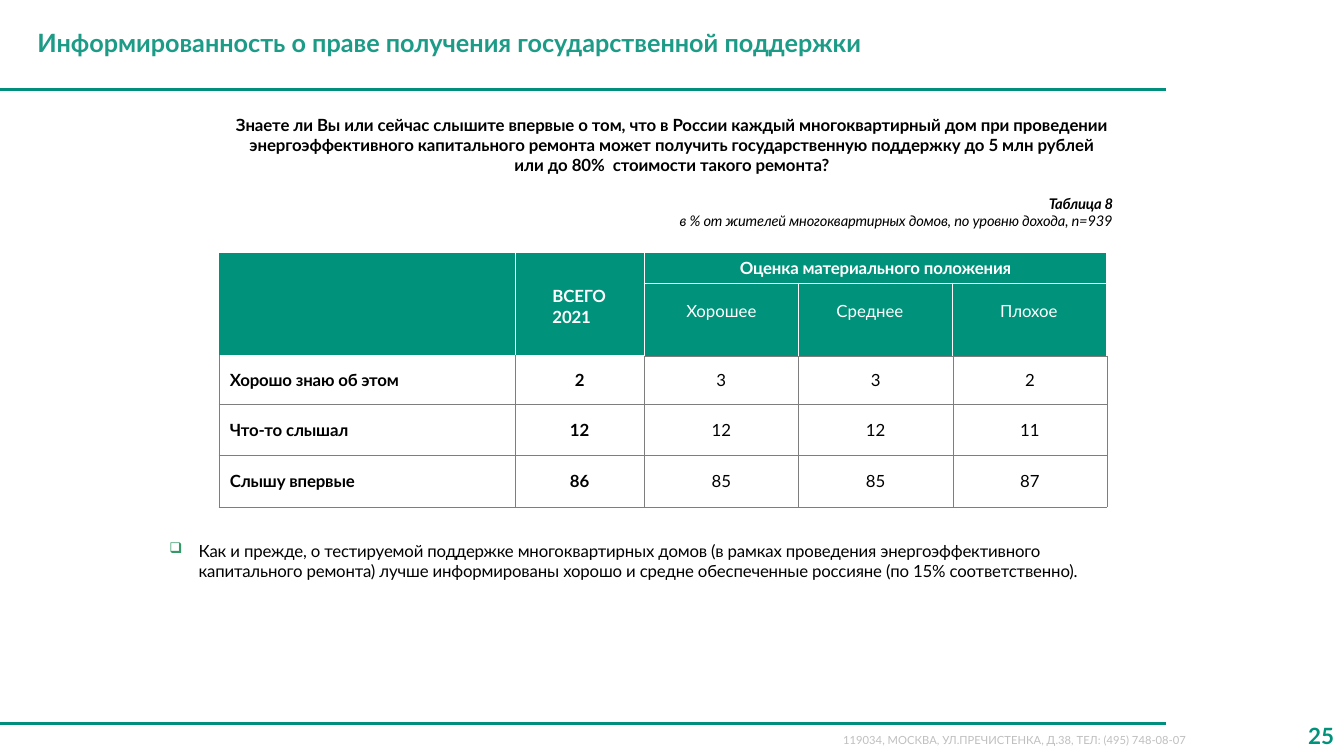
from pptx import Presentation
from pptx.dml.color import RGBColor
from pptx.enum.shapes import MSO_CONNECTOR
from pptx.enum.text import MSO_ANCHOR, MSO_AUTO_SIZE, PP_ALIGN
from pptx.oxml.ns import qn
from pptx.util import Inches, Pt
from lxml.etree import SubElement

COLORS = {
    "rule": "008F7D", "header": "00927B", "header_fill": "00927A",
    "title": "1C9B87", "bullet": "339966", "address": "BFBFBF",
    "text": "000000", "white": "FFFFFF", "grid": "7E7E7E",
}
FONT = "Lato"
SLIDE_W, SLIDE_H = 13.33, 7.5
RULE_W = 11.56

COLUMN_WIDTHS = [2.94, 1.28] + [1.53] * 3
ROW_HEIGHTS = [0.31, 0.72, 0.48, 0.51, 0.51]
INCOME_LEVELS = ["Хорошее", "Среднее", "Плохое"]
ANSWERS = [
    ("Хорошо знаю об этом", 2, 3, 3, 2),
    ("Что-то слышал", 12, 12, 12, 11),
    ("Слышу впервые", 86, 85, 85, 87),
]
QUESTION_LINES = [
    "Знаете ли Вы или сейчас слышите впервые о том, что в России каждый многоквартирный дом при проведении",
    "энергоэффективного капитального ремонта может получить государственную поддержку до 5 млн рублей",
    "или до 80%  стоимости такого ремонта?",
]
CONCLUSION = (
    "Как и прежде, о тестируемой поддержке многоквартирных домов (в рамках проведения "
    "энергоэффективного капитального ремонта) лучше информированы хорошо и средне "
    "обеспеченные россияне (по 15% соответственно)."
)


def color(name):
    """Return the named palette colour."""
    return RGBColor.from_string(COLORS[name])


def write(paragraph, text, size=12, ink="text", bold=False, italic=False, spacing=0):
    """Add one formatted run to a paragraph."""
    run = paragraph.add_run()
    run.text = text
    font = run.font
    font.name, font.size, font.bold, font.italic = FONT, Pt(size), bold, italic
    font.color.rgb = color(ink)
    if spacing:
        run._r.get_or_add_rPr().set("spc", str(round(spacing * 100)))


def add_frame(slide, box, insets=(0.1, 0.05, 0.1, 0.05)):
    """Add a wrapping text box and return its text frame."""
    frame = slide.shapes.add_textbox(*map(Inches, box)).text_frame
    frame.word_wrap = True
    set_insets(frame, insets)
    return frame


def set_insets(holder, insets):
    """Set left, top, right and bottom margins of a frame or cell."""
    holder.margin_left, holder.margin_top, holder.margin_right, holder.margin_bottom = map(Inches, insets)


def add_rule(slide, y):
    """Draw a green horizontal rule from the left slide edge."""
    rule = slide.shapes.add_connector(MSO_CONNECTOR.STRAIGHT, 0, Inches(y), Inches(RULE_W), Inches(y))
    rule.line.color.rgb = color("rule")
    rule.line.width = Pt(2)
    SubElement(rule._element.spPr, qn("a:effectLst"))


def add_header(slide, box):
    """Place the slide title and the rule under it."""
    left, top, width, height = box
    title = slide.shapes.title
    title.left, title.top, title.width, title.height = map(Inches, box)
    frame = title.text_frame
    frame.auto_size = MSO_AUTO_SIZE.NONE
    frame.vertical_anchor = MSO_ANCHOR.MIDDLE
    heading = frame.paragraphs[0]
    heading.alignment = PP_ALIGN.JUSTIFY
    write(heading, "Информированность о праве получения государственной поддержки", 18, "title", True)
    add_rule(slide, top + height + 0.04)


def add_footer(slide, box):
    """Place the bottom rule, the address and the page number."""
    left, top, width, height = box
    add_rule(slide, top + 0.08)
    address = add_frame(slide, (left + 0.62 * width, top + 0.13, 3.84, 0.24))
    write(address.paragraphs[0], "119034, МОСКВА, УЛ.ПРЕЧИСТЕНКА, Д.38, ТЕЛ: (495) 748-08-07", 8, "address")
    page = add_frame(slide, (left + width - 0.69, top, 0.69, height))
    page.vertical_anchor = MSO_ANCHOR.MIDDLE
    page.paragraphs[0].alignment = PP_ALIGN.RIGHT
    write(page.paragraphs[0], "25", 16, "header", True)


def add_question(slide, box):
    """Place the survey question and the table caption."""
    frame = add_frame(slide, box, (0, 0.02, 0, 0))
    question = frame.paragraphs[0]
    question.alignment = PP_ALIGN.CENTER
    question._p.get_or_add_pPr().set("marR", str(Inches(0.09)))
    for index, line in enumerate(QUESTION_LINES):
        if index:
            question.add_line_break()
        write(question, line, bold=True, spacing=-0.05)
    number, base = frame.add_paragraph(), frame.add_paragraph()
    number.alignment = base.alignment = PP_ALIGN.RIGHT
    number.space_before = Pt(13.6)
    write(number, "Таблица 8", 10.5, bold=True, italic=True, spacing=-0.1)
    write(base, "в % от жителей многоквартирных домов, по уровню дохода, n=939", 10.5, italic=True, spacing=-0.1)


def style_cell(cell, is_header, meets_data):
    """Give a cell its borders, fill and zero margins."""
    properties = cell._tc.get_or_add_tcPr()
    for side in "LRTB":
        white = is_header and not (side == "B" and meets_data)
        border = SubElement(properties, qn(f"a:ln{side}"), w=str(Pt(1 if white else 0.25)))
        fill = SubElement(border, qn("a:solidFill"))
        SubElement(fill, qn("a:srgbClr"), val=COLORS["white" if white else "grid"])
    if is_header:
        cell.fill.solid()
        cell.fill.fore_color.rgb = color("header_fill")
    else:
        cell.fill.background()
    set_insets(cell, (0, 0, 0, 0))
    cell.vertical_anchor = MSO_ANCHOR.MIDDLE


def fill_cell(cell, text, align=PP_ALIGN.CENTER, **style):
    """Write one aligned line into a cell."""
    cell.text_frame.paragraphs[0].alignment = align
    write(cell.text_frame.paragraphs[0], text, **style)


def add_answers_table(slide, left, top):
    """Build the table of answers by income level."""
    table = slide.shapes.add_table(
        len(ROW_HEIGHTS), len(COLUMN_WIDTHS), Inches(left), Inches(top),
        Inches(sum(COLUMN_WIDTHS)), Inches(sum(ROW_HEIGHTS))).table
    table.first_row = table.horz_banding = False
    for column, width in zip(table.columns, COLUMN_WIDTHS):
        column.width = Inches(width)
    for index, (row, height) in enumerate(zip(table.rows, ROW_HEIGHTS)):
        row.height = Inches(height)
        for cell in row.cells:
            style_cell(cell, index < 2, index == 1)
    for first, last in [((0, 0), (1, 0)), ((0, 1), (1, 1)), ((0, 2), (0, 4))]:
        table.cell(*first).merge(table.cell(*last))

    total = table.cell(0, 1)
    set_insets(total, (0.37, 0.05, 0, 0))
    label = total.text_frame.paragraphs[0]
    write(label, "ВСЕГО", ink="white", bold=True, spacing=-0.1)
    label.add_line_break()
    write(label, "2021", ink="white", bold=True, spacing=-0.1)
    fill_cell(table.cell(0, 2), "Оценка материального положения", ink="white", bold=True, spacing=-0.1)
    for offset, level in enumerate(INCOME_LEVELS):
        cell = table.cell(1, 2 + offset)
        cell.vertical_anchor = MSO_ANCHOR.TOP
        set_insets(cell, (0, 0.18, 0.49 if offset else 0, 0))
        fill_cell(cell, level, PP_ALIGN.RIGHT if offset else PP_ALIGN.CENTER, ink="white")
    for row, (answer, *shares) in enumerate(ANSWERS, 2):
        table.cell(row, 0).margin_left = Inches(0.11)
        fill_cell(table.cell(row, 0), answer, PP_ALIGN.LEFT, bold=True, spacing=-0.1)
        for column, share in enumerate(shares, 1):
            fill_cell(table.cell(row, column), str(share), bold=column == 1)


def add_conclusion(slide, box):
    """Place the bulleted conclusion."""
    paragraph = add_frame(slide, box, (0, 0.02, 0, 0)).paragraphs[0]
    properties = paragraph._p.get_or_add_pPr()
    properties.set("marL", str(Inches(0.31)))
    properties.set("indent", str(Inches(-0.29)))
    SubElement(SubElement(properties, qn("a:buClr")), qn("a:srgbClr"), val=COLORS["bullet"])
    SubElement(properties, qn("a:buSzPct"), val="88000")
    SubElement(properties, qn("a:buChar"), char="❑")
    write(paragraph, CONCLUSION, spacing=-0.1)


def main():
    """Build and save the slide."""
    deck = Presentation()
    deck.slide_width, deck.slide_height = Inches(SLIDE_W), Inches(SLIDE_H)
    slide = deck.slides.add_slide(deck.slide_layouts[5])
    add_header(slide, (0.27, 0, 10.84, 0.85))
    add_question(slide, (2.29, 1.12, 8.84, 1.16))
    add_answers_table(slide, 2.17, 2.5)
    add_conclusion(slide, (1.66, 5.34, 9.54, 0.42))
    add_footer(slide, (0, SLIDE_H - 0.4, SLIDE_W, 0.4))
    deck.save("out.pptx")


if __name__ == "__main__":
    main()
